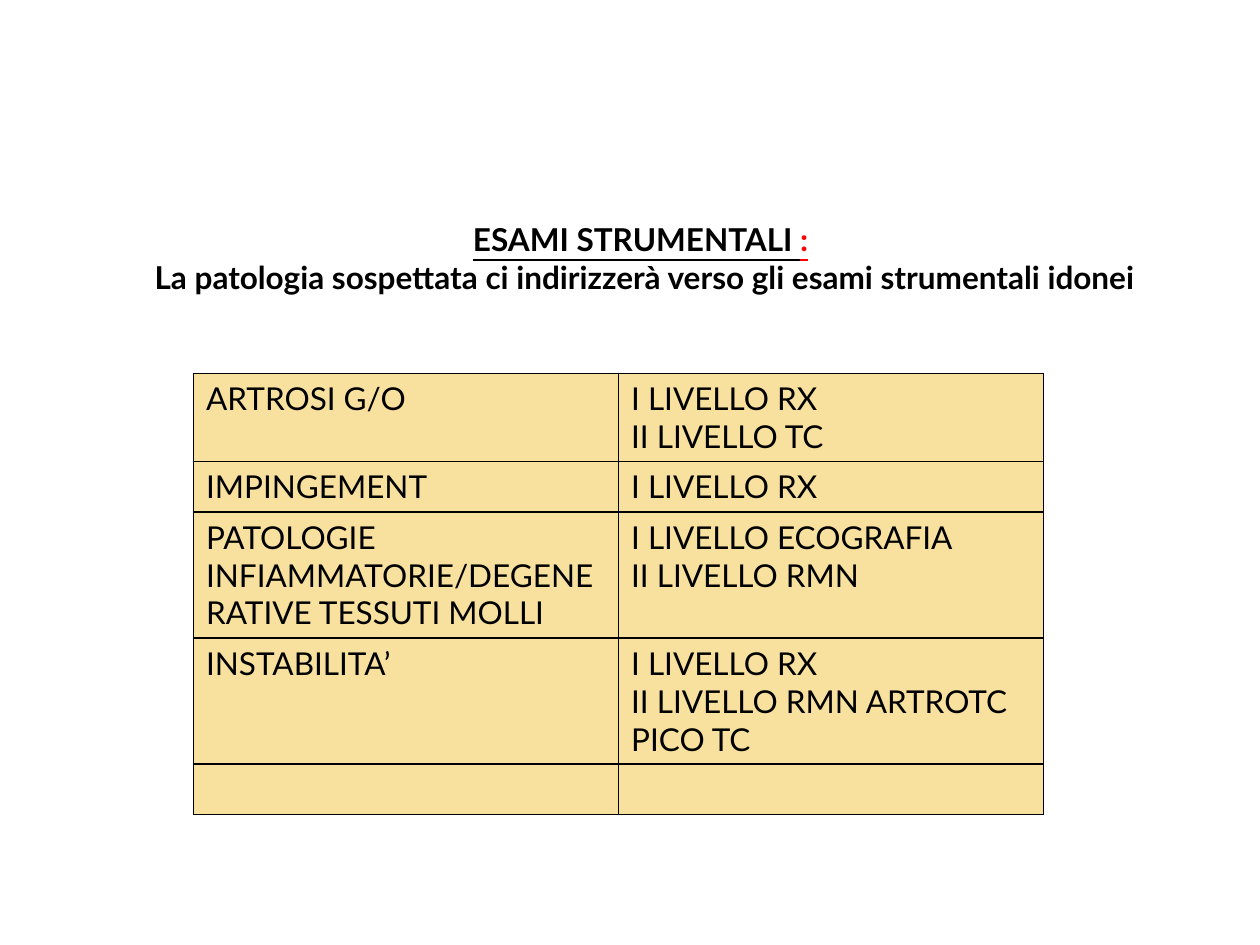
"""Build a slide with a table of imaging exams for each suspected pathology."""
from lxml.etree import SubElement
from pptx import Presentation
from pptx.dml.color import RGBColor
from pptx.enum.text import MSO_AUTO_SIZE, PP_ALIGN
from pptx.oxml.ns import qn
from pptx.util import Pt

BLACK, RED, SAND = "000000", "FF0000", "F8E19F"
TITLE = [
    [("ESAMI STRUMENTALI ", {"bold": True, "underline": True}),
     (":", {"bold": True, "underline": True, "color": RED})],
    [(" La patologia sospettata ci indirizzerà verso gli esami strumentali idonei", {"bold": True})],
]
EXAMS = [
    (2, ["ARTROSI G/O"], ["I LIVELLO RX", "II LIVELLO TC"]),
    (1, ["IMPINGEMENT"], ["I LIVELLO RX"]),
    (3, ["PATOLOGIE INFIAMMATORIE/DEGENERATIVE TESSUTI MOLLI"],
     ["I LIVELLO ECOGRAFIA", "II LIVELLO RMN"]),
    (3, ["INSTABILITA’"], ["I LIVELLO RX", "II LIVELLO RMN ARTROTC PICO TC"]),
    (1, [""], [""]),
]
LINE_HEIGHT, CELL_PADDING = 21.6, 7.2
TABLE_LEFT, TABLE_TOP, COLUMN_WIDTH = 110.6, 213.3, 242.9


def rgb(code):
    return RGBColor.from_string(code)


def write(frame, lines, align=PP_ALIGN.LEFT):
    for index, line in enumerate(lines):
        para = frame.paragraphs[0] if index == 0 else frame.add_paragraph()
        para.alignment = align
        for text, style in line:
            add_span(para, text, **style)


def add_span(para, text, size=18, color=BLACK, bold=False, underline=False):
    span = para.add_run()
    span.text = text
    font = span.font
    font.name, font.size, font.bold, font.underline = "Lato", Pt(size), bold, underline
    font.color.rgb = rgb(color)


def add_borders(cell, color=BLACK, width=1):
    properties = cell._tc.get_or_add_tcPr()
    for position, side in enumerate(("lnL", "lnR", "lnT", "lnB")):
        line = SubElement(properties, qn(f"a:{side}"), w=str(Pt(width)))
        fill = SubElement(line, qn("a:solidFill"))
        SubElement(fill, qn("a:srgbClr"), val=color)
        properties.insert(position, line)


def add_title(page):
    box = page.shapes.add_textbox(Pt(65.5), Pt(122.4), Pt(601.2), Pt(51))
    frame = box.text_frame
    frame.word_wrap = True
    frame.auto_size = MSO_AUTO_SIZE.SHAPE_TO_FIT_TEXT
    write(frame, TITLE, PP_ALIGN.CENTER)


def add_exams(page):
    heights = [count * LINE_HEIGHT + CELL_PADDING for count, *_ in EXAMS]
    table = page.shapes.add_table(len(EXAMS), 2, Pt(TABLE_LEFT), Pt(TABLE_TOP),
                                  Pt(2 * COLUMN_WIDTH), Pt(sum(heights))).table
    table.first_row = table.horz_banding = False
    for column in table.columns:
        column.width = Pt(COLUMN_WIDTH)
    for row, height, (_, *contents) in zip(table.rows, heights, EXAMS):
        row.height = Pt(height)
        for cell, lines in zip(row.cells, contents):
            cell.fill.solid()
            cell.fill.fore_color.rgb = rgb(SAND)
            add_borders(cell)
            write(cell.text_frame, [[(line, {})] for line in lines])


def main():
    deck = Presentation()
    deck.slide_width, deck.slide_height = Pt(720), Pt(540)
    page = deck.slides.add_slide(deck.slide_layouts[6])
    add_title(page)
    add_exams(page)
    deck.save("out.pptx")


if __name__ == "__main__":
    main()
